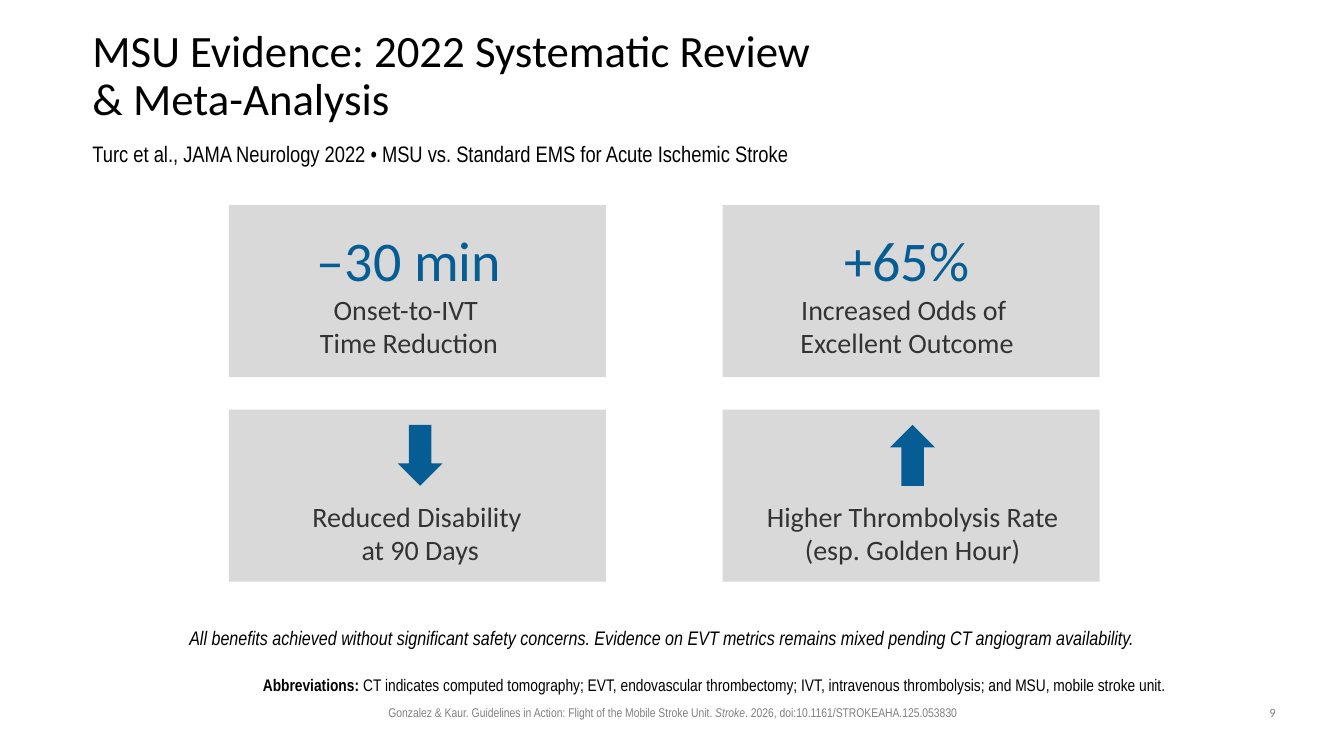
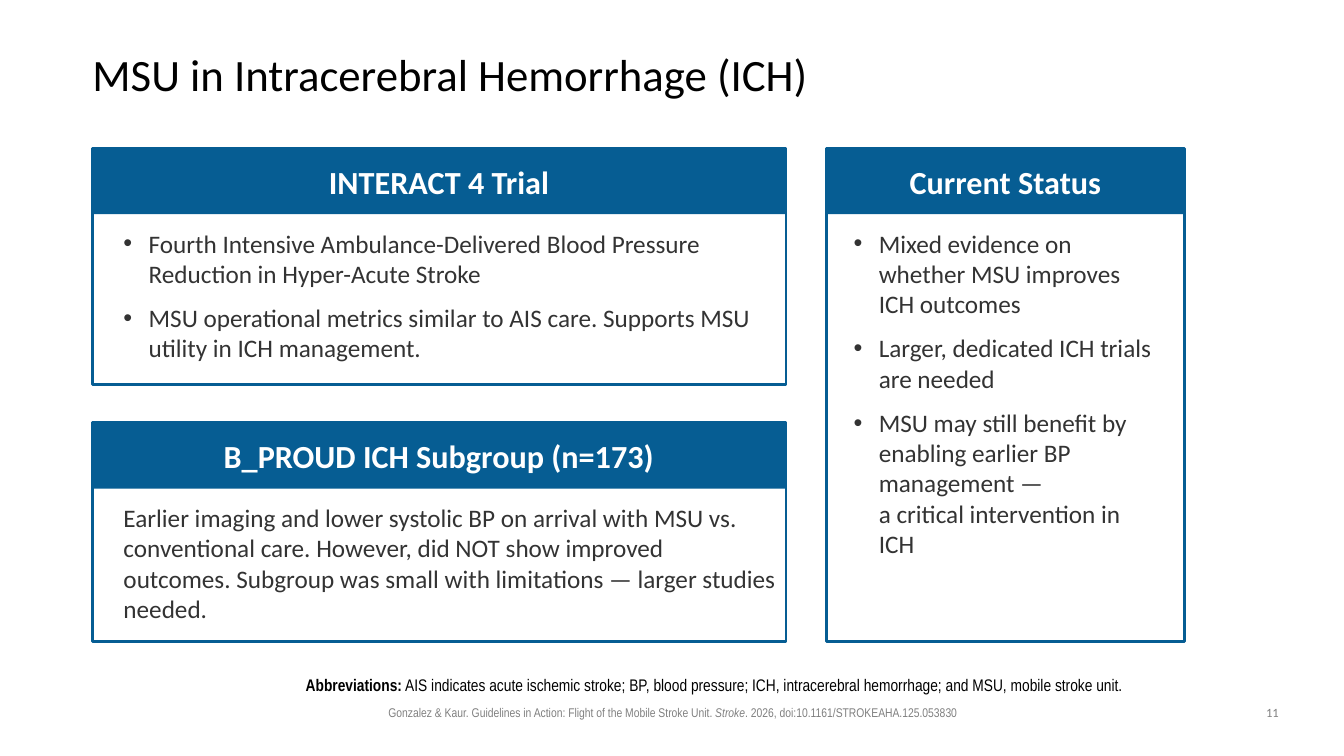
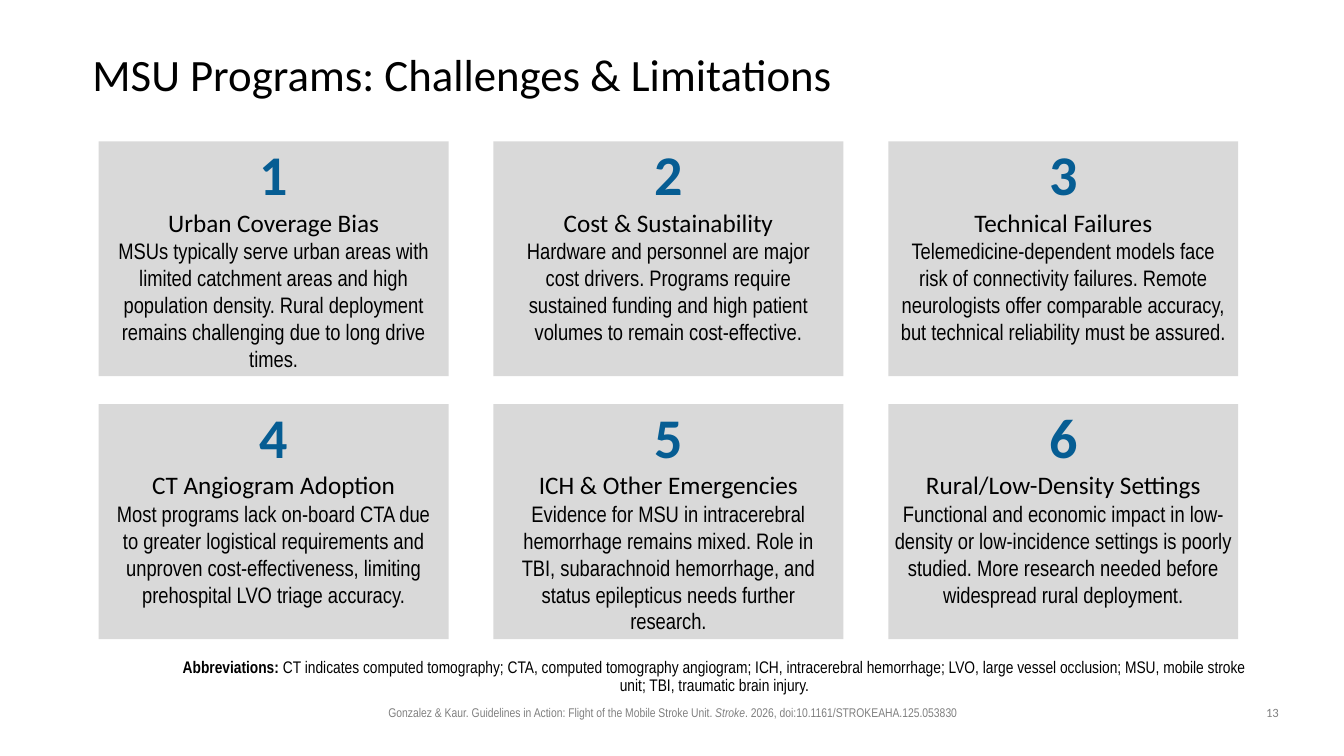
"""Build three slides on the evidence for mobile stroke units."""
from collections import namedtuple
from dataclasses import dataclass

from lxml import etree
from pptx import Presentation
from pptx.dml.color import RGBColor
from pptx.enum import shapes, text
from pptx.oxml import ns
from pptx.util import Pt

Box = namedtuple("Box", "left top width height")
Style = namedtuple("Style", "size color font bold italic", defaults=(False, False))
Line = namedtuple("Line", "words style bullet", defaults=(False,))
Outcome = namedtuple("Outcome", "headline label nudge")
Panel = namedtuple("Panel", "box heading paragraphs bulleted left_pad right_pad")
Challenge = namedtuple("Challenge", "name detail text_width")

CENTER = text.PP_ALIGN.CENTER
MIDDLE = text.MSO_ANCHOR.MIDDLE
SHAPE = shapes.MSO_SHAPE


@dataclass(frozen=True)
class Theme:
    """Colours and text styles shared by all slides."""

    blue: str = "065D93"
    gray: str = "D9D9D9"
    title: Style = Style(32, "000000", "Calibri")
    subtitle: Style = Style(16, "000000", "Arial Narrow")
    remark: Style = Style(14, "000000", "Arial Narrow", italic=True)
    abbreviations: Style = Style(12, "000000", "Arial Narrow")
    citation: Style = Style(9, "808080", "Arial Narrow")
    page: Style = Style(9, "808080", "Calibri")
    figure: Style = Style(40, "065D93", "Calibri")
    label: Style = Style(20, "333333", "Calibri")
    heading: Style = Style(23, "FFFFFF", "Calibri", bold=True)
    body: Style = Style(18, "333333", "Calibri")
    number: Style = Style(40, "065D93", "Calibri", bold=True)
    name: Style = Style(18, "000000", "Calibri")


THEME = Theme()
TITLE_BOX = Box(66, 29, 828, 52)
ABBREVIATIONS_BOX = Box(120, 467, 788, 33)
CITATION_BOX = Box(170, 500, 621, 18)
PAGE_BOX = Box(894, 500, 30, 19)

OUTCOMES = [
    Outcome("–30 min", "Onset-to-IVT \nTime Reduction", -6),
    Outcome("+65%", "Increased Odds of \nExcellent Outcome", -3),
    Outcome(SHAPE.DOWN_ARROW, "Reduced Disability \nat 90 Days", 2),
    Outcome(SHAPE.UP_ARROW, "Higher Thrombolysis Rate (esp. Golden Hour)", 1),
]

PANELS = [
    Panel(Box(66, 106, 495.5, 168.5), "INTERACT 4 Trial", [
        "Fourth Intensive Ambulance-Delivered Blood Pressure Reduction in Hyper-Acute Stroke",
        "MSU operational metrics similar to AIS care. Supports MSU utility in ICH management.",
    ], True, 15, 0),
    Panel(Box(66, 302, 495.5, 156), "B_PROUD ICH Subgroup (n=173)", [
        "Earlier imaging and lower systolic BP on arrival with MSU vs. conventional care. "
        "However, did NOT show improved outcomes. Subgroup was small with limitations — "
        "larger studies needed.",
    ], False, 15, 0),
    Panel(Box(590.5, 106, 255.5, 352), "Current Status", [
        "Mixed evidence on whether MSU improves ICH outcomes",
        "Larger, dedicated ICH trials are needed",
        "MSU may still benefit by enabling earlier BP management — \na critical intervention in ICH",
    ], True, 12, 10),
]

CHALLENGES = [
    Challenge("Urban Coverage Bias",
              "MSUs typically serve urban areas with limited catchment areas and high population "
              "density. Rural deployment remains challenging due to long drive times.", 240.5),
    Challenge("Cost & Sustainability",
              "Hardware and personnel are major cost drivers. Programs require sustained funding "
              "and high patient volumes to remain cost-effective.", 240.5),
    Challenge("Technical Failures",
              "Telemedicine-dependent models face risk of connectivity failures. Remote neurologists "
              "offer comparable accuracy, but technical reliability must be assured.", 250),
    Challenge("CT Angiogram Adoption",
              "Most programs lack on-board CTA due to greater logistical requirements and unproven "
              "cost-effectiveness, limiting prehospital LVO triage accuracy.", 240.5),
    Challenge("ICH & Other Emergencies",
              "Evidence for MSU in intracerebral hemorrhage remains mixed. Role in TBI, subarachnoid "
              "hemorrhage, and status epilepticus needs further research.", 235.5),
    Challenge("Rural/Low-Density Settings",
              "Functional and economic impact in low-density or low-incidence settings is poorly "
              "studied. More research needed before widespread rural deployment.", 259),
]


def grid(area, columns, rows, gap_x, gap_y):
    """Return the equal cells of an area, row by row."""
    width = (area.width - gap_x * (columns - 1)) / columns
    height = (area.height - gap_y * (rows - 1)) / rows
    return [Box(area.left + column * (width + gap_x), area.top + row * (height + gap_y), width, height)
            for row in range(rows) for column in range(columns)]


def place(shape, box):
    """Move and size a shape to fit a box."""
    shape.left, shape.top, shape.width, shape.height = (Pt(length) for length in box)


def set_font(paragraph, style):
    """Give a whole paragraph one text style."""
    font = paragraph.font
    font.name, font.size = style.font, Pt(style.size)
    font.bold, font.italic = style.bold, style.italic
    font.color.rgb = RGBColor.from_string(style.color)


def set_bullet(paragraph, shown):
    """Show a hanging bullet, or clear an inherited one."""
    properties = paragraph._p.get_or_add_pPr()
    indent = Pt(18) if shown else 0
    properties.set("marL", str(indent))
    properties.set("indent", str(-indent))
    bullet = etree.SubElement(properties, ns.qn("a:buChar" if shown else "a:buNone"))
    if shown:
        bullet.set("char", "•")


def write(shape, lines, align=text.PP_ALIGN.LEFT, anchor=text.MSO_ANCHOR.TOP, space_after=0):
    """Fill a shape with styled paragraphs."""
    frame = shape.text_frame
    frame.word_wrap, frame.auto_size = True, text.MSO_AUTO_SIZE.NONE
    frame.vertical_anchor = anchor
    for position, line in enumerate(lines):
        paragraph = frame.add_paragraph() if position else frame.paragraphs[0]
        paragraph.text, paragraph.alignment = line.words, align
        paragraph.space_before, paragraph.space_after = Pt(0), Pt(space_after)
        set_bullet(paragraph, line.bullet)
        set_font(paragraph, line.style)
    return frame


def add_text(slide, box, lines, align=CENTER):
    """Add a text box."""
    shape = slide.shapes.add_textbox(*(Pt(length) for length in box))
    return write(shape, lines, align)


def add_block(slide, kind, box, fill=None, line=None):
    """Add a flat preset shape with a fill or an outline."""
    shape = slide.shapes.add_shape(kind, *(Pt(length) for length in box))
    shape.shadow.inherit = False
    if fill:
        shape.fill.solid()
        shape.fill.fore_color.rgb = RGBColor.from_string(fill)
    else:
        shape.fill.background()
    if line:
        shape.line.color.rgb = RGBColor.from_string(line)
        shape.line.width = Pt(2)
    else:
        shape.line.fill.background()
    return shape


def add_title(slide, words, box):
    """Place the title placeholder."""
    title = slide.shapes.title
    place(title, box)
    frame = write(title, [Line(words, THEME.title)], anchor=MIDDLE)
    frame.margin_left = frame.margin_right = frame.margin_top = frame.margin_bottom = 0
    frame.paragraphs[0].line_spacing = 0.9


def add_abbreviations(slide, words, box):
    """Place the abbreviation key in the first body placeholder."""
    key = slide.placeholders[1]
    place(key, box)
    frame = write(key, [Line("", THEME.abbreviations)], CENTER, text.MSO_ANCHOR.BOTTOM)
    frame.margin_left = 0
    paragraph = frame.paragraphs[0]
    paragraph.line_spacing = 0.9
    for part, bold in (("Abbreviations:", True), (" " + words, False)):
        run = paragraph.add_run()
        run.text, run.font.bold = part, bold


def add_footer(slide, page, citation_box, page_box):
    """Add the citation and the page number."""
    frame = add_text(slide, citation_box, [Line("", THEME.citation)])
    for part, italic in (("Gonzalez & Kaur. Guidelines in Action: Flight of the Mobile Stroke Unit. ", False),
                         ("Stroke", True),
                         (". 2026, doi:10.1161/STROKEAHA.125.053830", False)):
        run = frame.paragraphs[0].add_run()
        run.text, run.font.italic = part, italic
    add_text(slide, page_box, [Line(str(page), THEME.page)])


def add_slide(presentation, layout, title, abbreviations, page):
    """Add a slide with the shared title, key and footer."""
    slide = presentation.slides.add_slide(presentation.slide_layouts[layout])
    add_title(slide, title, TITLE_BOX)
    add_abbreviations(slide, abbreviations, ABBREVIATIONS_BOX)
    add_footer(slide, page, CITATION_BOX, PAGE_BOX)
    return slide


def add_outcome(slide, box, outcome):
    """Draw a card with a figure or an arrow above its label."""
    add_block(slide, SHAPE.RECTANGLE, box, THEME.gray)
    center = box.left + box.width / 2 + outcome.nudge
    label = Line(outcome.label, THEME.label)
    text_box = Box(center - 132, box.top + 10.8, 264, 104.5)
    if isinstance(outcome.headline, str):
        add_text(slide, text_box, [Line(outcome.headline, THEME.figure), label])
    else:
        add_block(slide, outcome.headline, Box(center - 16, box.top + 11, 32, 43.5), THEME.blue)
        add_text(slide, text_box._replace(top=box.top + 60.5, height=55.5), [label])


def add_panel(slide, panel, placeholder):
    """Draw an outlined panel with a heading bar over its body text."""
    box, bar_height, body_top = panel.box, 47, 53.3
    bar = add_block(slide, SHAPE.RECTANGLE, box._replace(height=bar_height), THEME.blue)
    write(bar, [Line(panel.heading, THEME.heading)], CENTER, MIDDLE)
    add_block(slide, SHAPE.RECTANGLE, box, line=THEME.blue)
    place(placeholder, Box(box.left + panel.left_pad, box.top + body_top,
                           box.width - panel.left_pad - panel.right_pad, box.height - body_top - 8))
    write(placeholder, [Line(words, THEME.body, panel.bulleted) for words in panel.paragraphs],
          space_after=10 if panel.bulleted else 0)


def add_challenge(slide, box, number, challenge):
    """Draw a numbered card."""
    add_block(slide, SHAPE.RECTANGLE, box, THEME.gray)
    left = box.left + (box.width - challenge.text_width) / 2
    add_text(slide, Box(left, box.top - 4.7, challenge.text_width, 180), [
        Line(str(number), THEME.number),
        Line(challenge.name, THEME.name),
        Line(challenge.detail, THEME.subtitle),
    ])


def build_review(presentation):
    """Build the slide of outcome cards."""
    slide = add_slide(presentation, 1, "MSU Evidence: 2022 Systematic Review \n& Meta-Analysis",
                      "CT indicates computed tomography; EVT, endovascular thrombectomy; IVT, intravenous "
                      "thrombolysis; and MSU, mobile stroke unit.", 9)
    add_text(slide, Box(59, 96.5, 814, 26.5), [
        Line("Turc et al., JAMA Neurology 2022 • MSU vs. Standard EMS for Acute Ischemic Stroke",
             THEME.subtitle)], text.PP_ALIGN.LEFT)
    cells = grid(Box(163.5, 146.5, 622, 269), 2, 2, 83.5, 23)
    for box, outcome in zip(cells, OUTCOMES):
        add_outcome(slide, box, outcome)
    add_text(slide, Box(66, 443.5, 814, 24.5), [
        Line("All benefits achieved without significant safety concerns. Evidence on EVT metrics "
             "remains mixed pending CT angiogram availability.", THEME.remark)])


def build_hemorrhage(presentation):
    """Build the slide of trial panels."""
    slide = add_slide(presentation, 4, "MSU in Intracerebral Hemorrhage (ICH)",
                      "AIS indicates acute ischemic stroke; BP, blood pressure; ICH, intracerebral "
                      "hemorrhage; and MSU, mobile stroke unit.", 11)
    for index, panel in enumerate(PANELS, 2):
        add_panel(slide, panel, slide.placeholders[index])


def build_challenges(presentation):
    """Build the slide of numbered challenges."""
    slide = add_slide(presentation, 1, "MSU Programs: Challenges & Limitations",
                      "CT indicates computed tomography; CTA, computed tomography angiogram; ICH, "
                      "intracerebral hemorrhage; LVO, large vessel occlusion; MSU, mobile stroke unit; "
                      "TBI, traumatic brain injury.", 13)
    cells = grid(Box(70.5, 101, 814, 355.5), 3, 2, 32, 20)
    for number, (box, challenge) in enumerate(zip(cells, CHALLENGES), 1):
        add_challenge(slide, box, number, challenge)


def main():
    """Build and save the presentation."""
    presentation = Presentation()
    presentation.slide_width, presentation.slide_height = Pt(960), Pt(540)
    for build in (build_review, build_hemorrhage, build_challenges):
        build(presentation)
    presentation.save("out.pptx")


if __name__ == "__main__":
    main()
